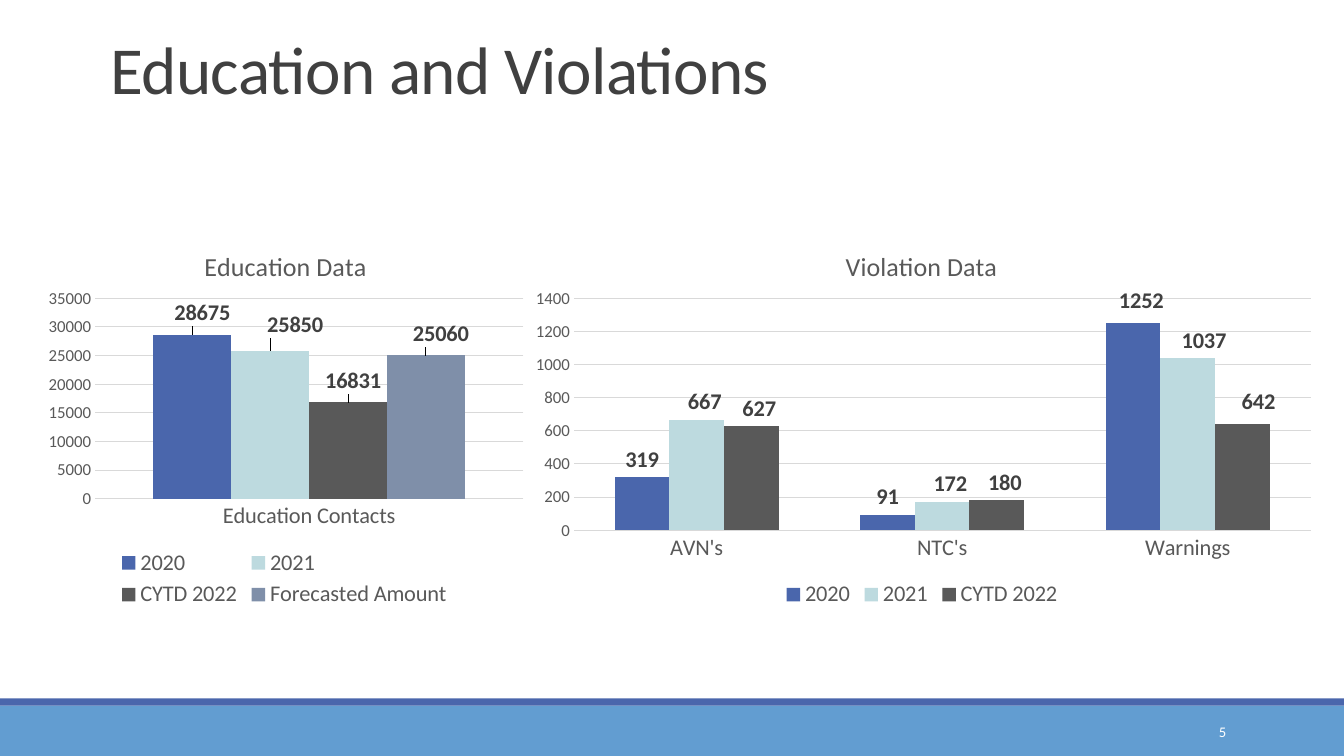
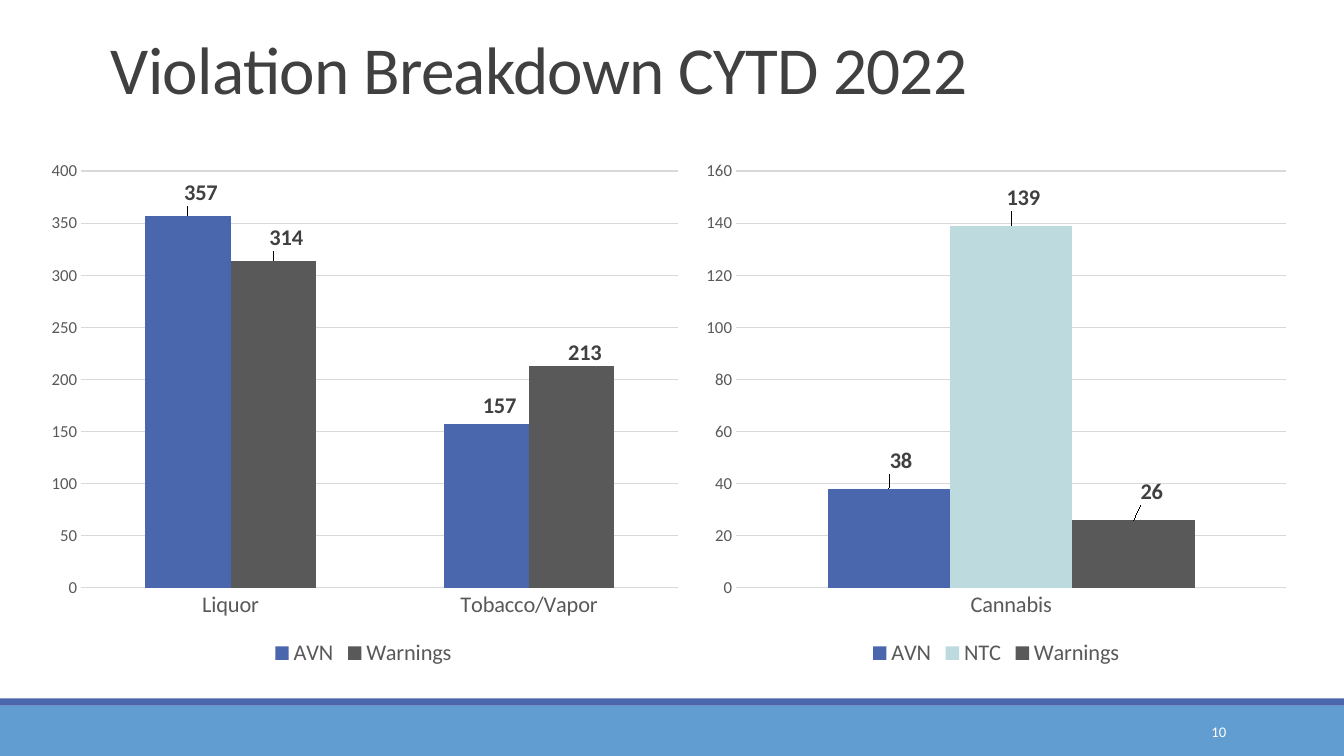
from pptx import Presentation
from pptx.chart.data import CategoryChartData
from pptx.dml.color import RGBColor
from pptx.enum import chart as ch, shapes, text
from pptx.oxml import parse_xml
from pptx.oxml.ns import nsdecls, qn
from pptx.util import Inches, Pt

FONT = "Calibri"
BLUE, SKY, PALE, SLATE = "4A66AC", "629DD1", "BDDADF", "7F8FA9"
DARK, GRAY, GRID, WHITE = "404040", "595959", "D9D9D9", "FFFFFF"
SLIDE_WIDTH, SLIDE_HEIGHT = 13.33, 7.5


def rgb(value):
    return RGBColor.from_string(value)


def style_font(font, size, color, bold=False):
    font.name = FONT
    font.size = Pt(size)
    font.bold = bold
    font.color.rgb = rgb(color)


def add_band(slide, top, height, color):
    band = slide.shapes.add_shape(
        shapes.MSO_SHAPE.RECTANGLE, 0, Inches(top), Inches(SLIDE_WIDTH), Inches(height))
    band.shadow.inherit = False
    band.fill.solid()
    band.fill.fore_color.rgb = rgb(color)
    band.line.fill.background()


def add_text(slide, box, wording, size, color, anchor):
    frame = slide.shapes.add_textbox(*map(Inches, box)).text_frame
    frame.word_wrap = True
    frame.vertical_anchor = anchor
    paragraph = frame.paragraphs[0]
    paragraph.text = wording
    style_font(paragraph.runs[0].font, size, color)
    return paragraph


def add_page(deck, title, number):
    slide = deck.slides.add_slide(deck.slide_layouts[6])
    add_band(slide, 7, 0.5, SKY)
    add_band(slide, 6.93, 0.07, BLUE)
    heading = add_text(slide, (1, 0.31, 11, 0.81), title, 48, DARK, text.MSO_ANCHOR.BOTTOM)
    heading.line_spacing = 0.85
    heading.runs[0].font._element.set("spc", "-50")
    page = add_text(slide, (10.83, 7.06, 1.43, 0.4), number, 10.5, WHITE,
                    text.MSO_ANCHOR.MIDDLE)
    page.alignment = text.PP_ALIGN.RIGHT
    return slide


def set_layout(parent, index, modes, **fractions):
    for old in parent.findall(qn("c:layout")):
        parent.remove(old)
    parts = [f'<c:{mode} val="{value}"/>' for mode, value in modes.items()]
    parts += [f'<c:{key} val="{value}"/>' for key, value in fractions.items()]
    parent.insert(index, parse_xml(
        f'<c:layout {nsdecls("c")}><c:manualLayout>{"".join(parts)}'
        '</c:manualLayout></c:layout>'))


def style_axes(chart, maximum, step):
    categories, values = chart.category_axis, chart.value_axis
    for axis, size in ((categories, 16), (values, 12)):
        axis.major_tick_mark = ch.XL_TICK_MARK.NONE
        axis.minor_tick_mark = ch.XL_TICK_MARK.NONE
        axis.format.line.fill.background()
        style_font(axis.tick_labels.font, size, GRAY)
    values.minimum_scale = 0
    values.maximum_scale = maximum
    values.major_unit = step
    gridline = values.major_gridlines.format.line
    gridline.color.rgb = rgb(GRID)
    gridline.width = Pt(0.75)


def style_series(series, color, shifts):
    series.format.fill.solid()
    series.format.fill.fore_color.rgb = rgb(color)
    series.invert_if_negative = False
    labels = series.data_labels
    labels.show_value = True
    labels.position = ch.XL_LABEL_POSITION.OUTSIDE_END
    style_font(labels.font, 16, DARK, True)
    for index in range(len(shifts)):
        label = series.points[index].data_label
        label.position = ch.XL_LABEL_POSITION.OUTSIDE_END
        style_font(label.font, 16, DARK, True)
    for label, (x, y) in zip(series._element.iter(qn("c:dLbl")), shifts):
        set_layout(label, 1, {}, x=x, y=y)


def add_title(chart, title, left):
    chart.has_title = True
    frame = chart.chart_title.text_frame
    frame.text = title
    style_font(frame.paragraphs[0].runs[0].font, 18.6, GRAY)
    set_layout(chart.chart_title._element, 1,
               {"xMode": "edge", "yMode": "edge"}, x=left, y=0.06)


def add_columns(slide, box, categories, rows, scale, plot_box, title=None, title_left=0):
    data = CategoryChartData()
    data.categories = categories
    for name, _, values, _ in rows:
        data.add_series(name, values)
    chart = slide.shapes.add_chart(
        ch.XL_CHART_TYPE.COLUMN_CLUSTERED, *map(Inches, box), data).chart
    style_font(chart.font, 10, "000000")
    chart.has_title = False
    if title:
        add_title(chart, title, title_left)
    chart.has_legend = True
    chart.legend.position = ch.XL_LEGEND_POSITION.BOTTOM
    chart.legend.include_in_layout = False
    style_font(chart.legend.font, 16, GRAY)
    style_axes(chart, *scale)
    plot = chart.plots[0]
    plot.gap_width = 150
    plot.overlap = 0
    plot.vary_by_categories = False
    for series, (_, color, _, shifts) in zip(plot.series, rows):
        style_series(series, color, shifts)
    set_layout(plot._element.getparent(), 0,
               {"layoutTarget": "inner", "xMode": "edge", "yMode": "edge"},
               **dict(zip("xywh", plot_box)))


def add_education_and_violations(deck):
    slide = add_page(deck, "Education and Violations", "5")
    add_columns(slide, (0.35, 2.18, 4.94, 3.9), ["Education Contacts"], [
        ("2020", BLUE, [28675], [(0.02, -0.01)]),
        ("2021", PALE, [25850], [(0.05, -0.02)]),
        ("CYTD 2022", GRAY, [16831], [(0.01, -0.01)]),
        ("Forecasted Amount", SLATE, [25060], [(0.03, -0.01)]),
    ], (35000, 5000), (0.12, 0.2, 0.86, 0.51), "Education Data", 0.33)
    add_columns(slide, (5.13, 2.18, 8.03, 3.9), ["AVN's", "NTC's", "Warnings"], [
        ("2020", BLUE, [319, 91, 1252], [(0, 0), (0, 0), (0.01, -0.01)]),
        ("2021", PALE, [667, 172, 1037], [(0.01, 0), (0.01, 0), (0.02, 0)]),
        ("CYTD 2022", GRAY, [627, 180, 642], [(0.01, 0), (0.01, 0), (0.02, -0.01)]),
    ], (1400, 200), (0.07, 0.2, 0.91, 0.59), "Violation Data", 0.4)


def add_violation_breakdown(deck):
    slide = add_page(deck, "Violation Breakdown CYTD 2022", "10")
    plot_box = (0.07, 0.04, 0.91, 0.8)
    add_columns(slide, (0.35, 1.49, 6.51, 5.17), ["Liquor", "Tobacco/Vapor"], [
        ("AVN", BLUE, [357, 157], [(0.02, -0.01), (0.02, 0)]),
        ("Warnings", GRAY, [314, 213], [(0.02, -0.01), (0.02, 0.01)]),
    ], (400, 50), plot_box)
    add_columns(slide, (6.88, 1.49, 6, 5.17), ["Cannabis"], [
        ("AVN", BLUE, [38], [(0.02, -0.02)]),
        ("NTC", PALE, [139], [(0.02, -0.02)]),
        ("Warnings", GRAY, [26], [(0.03, -0.02)]),
    ], (160, 20), plot_box)


def main():
    deck = Presentation()
    deck.slide_width = Inches(SLIDE_WIDTH)
    deck.slide_height = Inches(SLIDE_HEIGHT)
    add_education_and_violations(deck)
    add_violation_breakdown(deck)
    deck.save("out.pptx")


if __name__ == "__main__":
    main()
